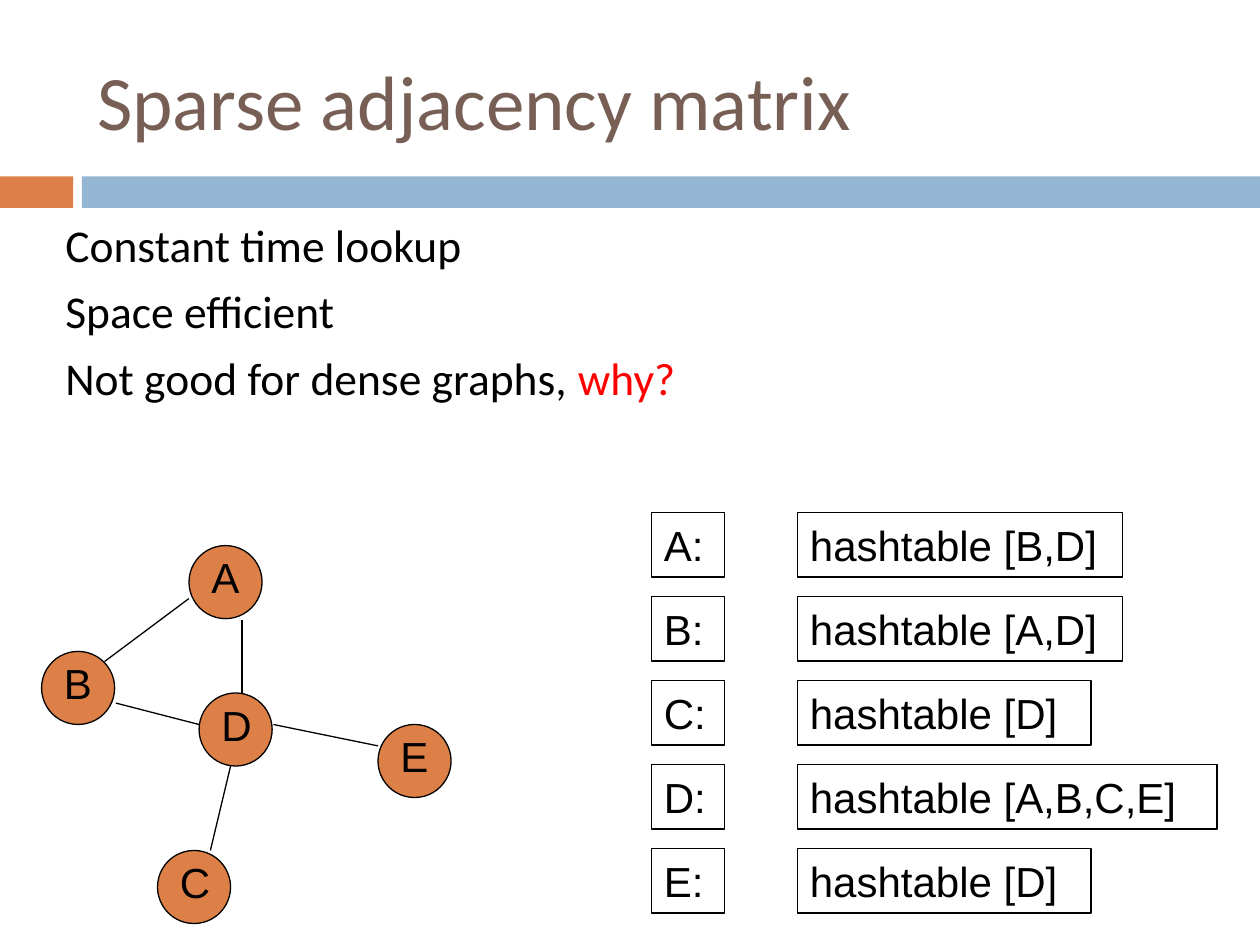
from pptx import Presentation
from pptx.dml.color import RGBColor
from pptx.enum.shapes import MSO_CONNECTOR, MSO_SHAPE
from pptx.enum.text import MSO_ANCHOR, PP_ALIGN
from pptx.oxml.ns import qn
from pptx.util import Inches, Pt
from lxml import etree

RECT, OVAL = MSO_SHAPE.RECTANGLE, MSO_SHAPE.OVAL
STRAIGHT = MSO_CONNECTOR.STRAIGHT
TOP, MIDDLE = MSO_ANCHOR.TOP, MSO_ANCHOR.MIDDLE
LEFT = PP_ALIGN.LEFT

BLACK = RGBColor(0x00, 0x00, 0x00)
RED = RGBColor(0xFF, 0x00, 0x00)
ORANGE = RGBColor(0xDD, 0x80, 0x47)
BLUE = RGBColor(0x94, 0xB6, 0xD2)
BROWN = RGBColor(0x77, 0x5F, 0x55)

NODE_SIZE = 0.58
NODES = {"A": (1.5, 4.33), "B": (0.33, 5.17), "C": (1.25, 6.75),
         "E": (3, 5.75), "D": (1.58, 5.5)}
EDGES = [
    (0.83, 5.25, 1.5, 4.75),
    (0.92, 5.58, 1.58, 5.75),
    (1.92, 5.5, 1.92, 4.92),
    (1.83, 6.08, 1.67, 6.75),
    (2.17, 5.75, 3, 5.92),
]
ROW_TOP, ROW_STEP, ROW_HEIGHT = 4.07, 2 / 3, 0.51
ROWS = [("A", "B,D", 2.58), ("B", "A,D", 2.58), ("C", "D", 2.33),
        ("D", "A,B,C,E", 3.33), ("E", "D", 2.33)]


def style_paragraph(p, font, size, color):
    p.alignment = LEFT
    p.font.name = font
    p.font.size = Pt(size)
    p.font.color.rgb = color


def add_shape(shapes, kind, box, fill=None, outlined=True):
    s = shapes.add_shape(kind, *map(Inches, box))
    s.shadow.inherit = False
    if fill is None:
        s.fill.background()
    else:
        s.fill.solid()
        s.fill.fore_color.rgb = fill
    if outlined:
        s.line.color.rgb = BLACK
        s.line.width = Pt(0.75)
    else:
        s.line.fill.background()
    return s


def write_label(s, text):
    tf = s.text_frame
    tf.word_wrap = True
    tf.vertical_anchor = TOP
    p = tf.paragraphs[0]
    p.text = text
    style_paragraph(p, "Arial", 24, BLACK)


def add_title(slide, text):
    title = slide.shapes.title
    title.left, title.top, title.width, title.height = map(
        Inches, (0.67, 0.25, 8.92, 1.08))
    tf = title.text_frame
    tf.vertical_anchor = MIDDLE
    p = tf.paragraphs[0]
    p.text = text
    style_paragraph(p, "Calibri", 44, BROWN)


def add_body(slide, lines, question):
    """Write one paragraph per line and end the last with a red question."""
    box = slide.shapes.add_textbox(*map(Inches, (0.42, 1.67, 9.08, 1.75)))
    tf = box.text_frame
    tf.word_wrap = True
    for i, line in enumerate(lines):
        p = tf.add_paragraph() if i else tf.paragraphs[0]
        p.text = line
        p.space_before = Pt(7)
        style_paragraph(p, "Calibri", 26, BLACK)
    r = p.add_run()
    r.text = question
    r.font.color.rgb = RED


def add_node(slide, name, x, y):
    shapes = slide.shapes.add_group_shape().shapes
    add_shape(shapes, OVAL, (x, y, NODE_SIZE, NODE_SIZE), ORANGE)
    label = shapes.add_textbox(*map(Inches, (x + 0.08, y, 0.5, 0.5)))
    write_label(label, name)


def add_edge(slide, ends):
    line = slide.shapes.add_connector(STRAIGHT, *map(Inches, ends))
    line.line.color.rgb = BLACK
    line.line.width = Pt(0.75)
    etree.SubElement(line._element.spPr, qn("a:effectLst"))


def add_box(slide, text, x, y, width):
    s = add_shape(slide.shapes, RECT, (x, y, width, ROW_HEIGHT))
    write_label(s, text)


def main():
    prs = Presentation()
    prs.slide_width, prs.slide_height = Inches(10), Inches(7.5)
    slide = prs.slides.add_slide(prs.slide_layouts[5])

    add_shape(slide.shapes, RECT, (0, 1.4, 0.58, 0.25), ORANGE, outlined=False)
    add_shape(slide.shapes, RECT, (0.65, 1.4, 9.35, 0.25), BLUE, outlined=False)
    add_title(slide, "Sparse adjacency matrix")
    add_body(slide, ["Constant time lookup", "Space efficient",
                     "Not good for dense graphs, "], "why?")

    for name, (x, y) in NODES.items():
        add_node(slide, name, x, y)
    for ends in EDGES:
        add_edge(slide, ends)
    for i, (name, neighbours, width) in enumerate(ROWS):
        y = ROW_TOP + i * ROW_STEP
        add_box(slide, f"{name}:", 5.17, y, 0.58)
        add_box(slide, f"hashtable [{neighbours}]", 6.33, y, width)

    prs.save("out.pptx")


if __name__ == "__main__":
    main()
